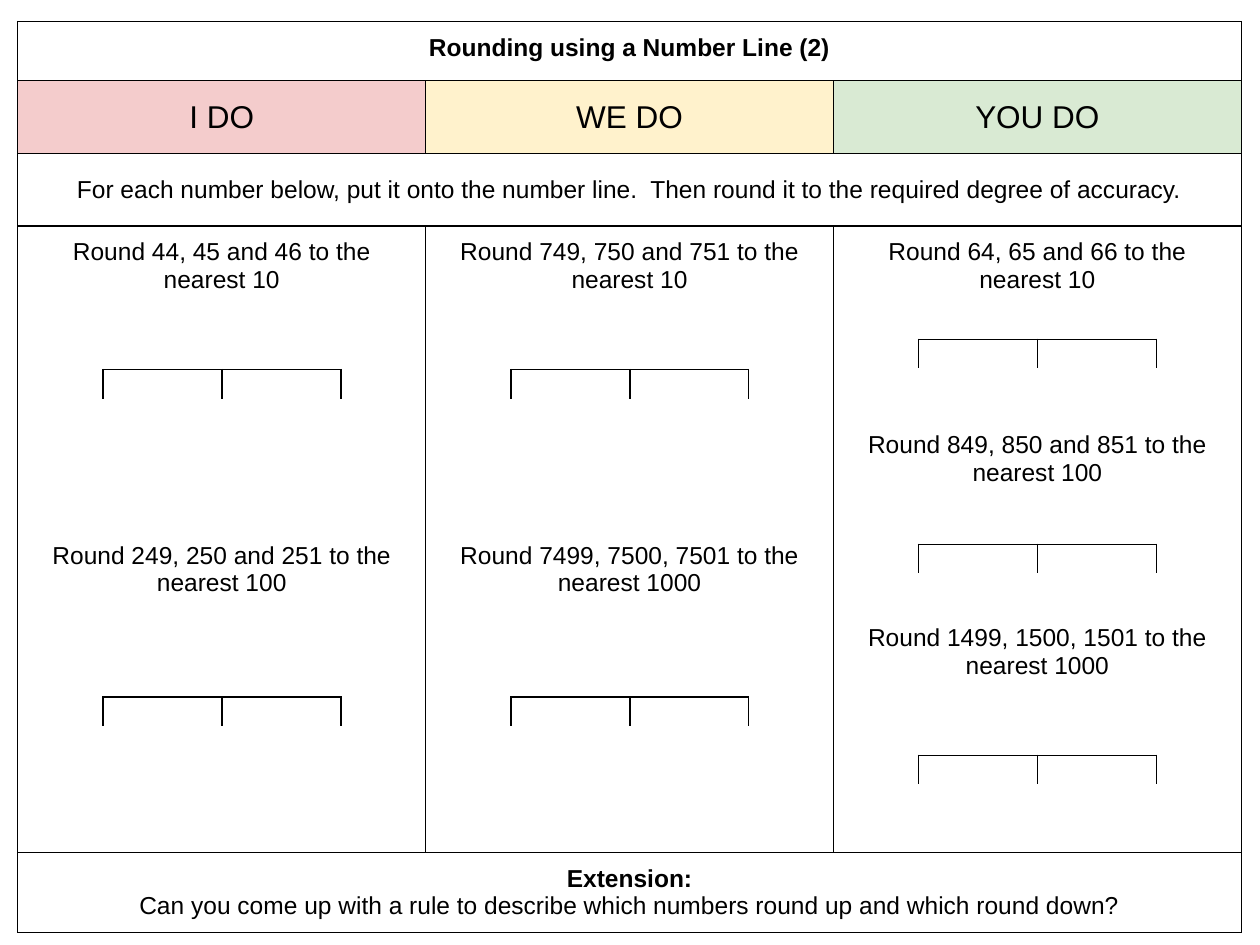
from lxml.etree import SubElement
from pptx import Presentation
from pptx.dml.color import RGBColor
from pptx.enum.text import MSO_ANCHOR, PP_ALIGN
from pptx.oxml.ns import qn
from pptx.util import Pt

COLUMN_WIDTH = 233.04
LINE_HEIGHT = 15.75
LESSON_LEFT, LESSON_TOP = 10.2, 12.2
LESSON_ROWS = [34, 41.5, 41.5, 358, 44]
HEADINGS = [("I DO", "F4CCCC"), ("WE DO", "FFF2CC"), ("YOU DO", "D9EAD3")]
QUESTIONS = [
    ["Round 44, 45 and 46 to the nearest 10",
     "Round 249, 250 and 251 to the nearest 100"],
    ["Round 749, 750 and 751 to the nearest 10",
     "Round 7499, 7500, 7501 to the nearest 1000"],
    ["Round 64, 65 and 66 to the nearest 10",
     "Round 849, 850 and 851 to the nearest 100",
     "Round 1499, 1500, 1501 to the nearest 1000"],
]
QUESTION_GAPS = [9 * LINE_HEIGHT, 9 * LINE_HEIGHT, 5 * LINE_HEIGHT]
LINE_TOPS = [[211.2, 398.3], [211.2, 398.3], [193.9, 311.1, 431.6]]
LINE_COLUMNS = [45.3, 45.3, 22.65, 22.65, 45.3, 45.3]
LINE_ROWS = [16.6, 19.8]
LINE_BORDERS = ["R", "LTR", "LTR", "LTR", "LTR", "L"]


def color(value):
    return RGBColor.from_string(value)


def add_plain_table(page, left, top, widths, heights):
    frame = page.shapes.add_table(len(heights), len(widths), Pt(left), Pt(top),
                                  Pt(sum(widths)), Pt(sum(heights)))
    table = frame.table
    table.first_row = table.horz_banding = False
    for column, width in zip(table.columns, widths):
        column.width = Pt(width)
    for row, height in zip(table.rows, heights):
        row.height = Pt(height)
    return table


def format_cell(cell, sides, weight, margin, fill=None):
    properties = cell._tc.get_or_add_tcPr()
    for side in "LRTB":
        line = SubElement(properties, qn(f"a:ln{side}"), w=str(Pt(weight)))
        if side in sides:
            solid = SubElement(line, qn("a:solidFill"))
            SubElement(solid, qn("a:srgbClr"), val="000000")
        else:
            SubElement(line, qn("a:noFill"))
    if fill:
        cell.fill.solid()
        cell.fill.fore_color.rgb = color(fill)
    else:
        cell.fill.background()
    for edge in ("left", "right", "top", "bottom"):
        setattr(cell, f"margin_{edge}", Pt(margin))


def write_cell(cell, texts, gap=0, anchor=MSO_ANCHOR.TOP, **changes):
    cell.vertical_anchor = anchor
    font_values = {"name": "Arial", "size": Pt(14), "bold": False, **changes}
    for index, text in enumerate(texts):
        para = cell.text_frame.paragraphs[0] if index == 0 else cell.text_frame.add_paragraph()
        para.alignment = PP_ALIGN.CENTER
        para.space_before = Pt(gap if index else 0)
        span = para.add_run()
        span.text = text
        for name, value in font_values.items():
            setattr(span.font, name, value)
        span.font.color.rgb = color("000000")


def add_lesson(page):
    table = add_plain_table(page, LESSON_LEFT, LESSON_TOP, [COLUMN_WIDTH] * 3, LESSON_ROWS)
    for row in range(len(LESSON_ROWS)):
        for column, (heading, fill) in enumerate(HEADINGS):
            format_cell(table.cell(row, column), "LRTB", 0.75, 7.2, fill if row == 1 else None)
    for row in (0, 2, 4):
        table.cell(row, 0).merge(table.cell(row, 2))
    write_cell(table.cell(0, 0), ["Rounding using a Number Line (2)"], bold=True)
    for column, (heading, fill) in enumerate(HEADINGS):
        write_cell(table.cell(1, column), [heading], anchor=MSO_ANCHOR.MIDDLE, size=Pt(18))
        write_cell(table.cell(3, column), QUESTIONS[column], gap=QUESTION_GAPS[column])
    write_cell(table.cell(2, 0), ["For each number below, put it onto the number line.  "
                                  "Then round it to the required degree of accuracy."],
               anchor=MSO_ANCHOR.MIDDLE)
    extension = table.cell(4, 0)
    write_cell(extension, ["Extension:", "Can you come up with a rule to describe which "
                           "numbers round up and which round down?"])
    extension.text_frame.paragraphs[0].runs[0].font.bold = True


def add_number_line(page, left, top):
    table = add_plain_table(page, left, top, LINE_COLUMNS, LINE_ROWS)
    for row, borders in enumerate([LINE_BORDERS, [""] * len(LINE_COLUMNS)]):
        for column, sides in enumerate(borders):
            cell = table.cell(row, column)
            format_cell(cell, sides, 1, 0)
            SubElement(cell.text_frame.paragraphs[0]._p, qn("a:endParaRPr"), sz="800")
    for row, starts in enumerate([(1, 3), (0, 2, 4)]):
        for start in starts:
            table.cell(row, start).merge(table.cell(row, start + 1))


def main():
    deck = Presentation()
    deck.slide_width, deck.slide_height = Pt(720), Pt(540)
    page = deck.slides.add_slide(deck.slide_layouts[6])
    add_lesson(page)
    for column, tops in enumerate(LINE_TOPS):
        for top in tops:
            add_number_line(page, 13.6 + column * COLUMN_WIDTH, top)
    deck.save("out.pptx")


if __name__ == "__main__":
    main()
